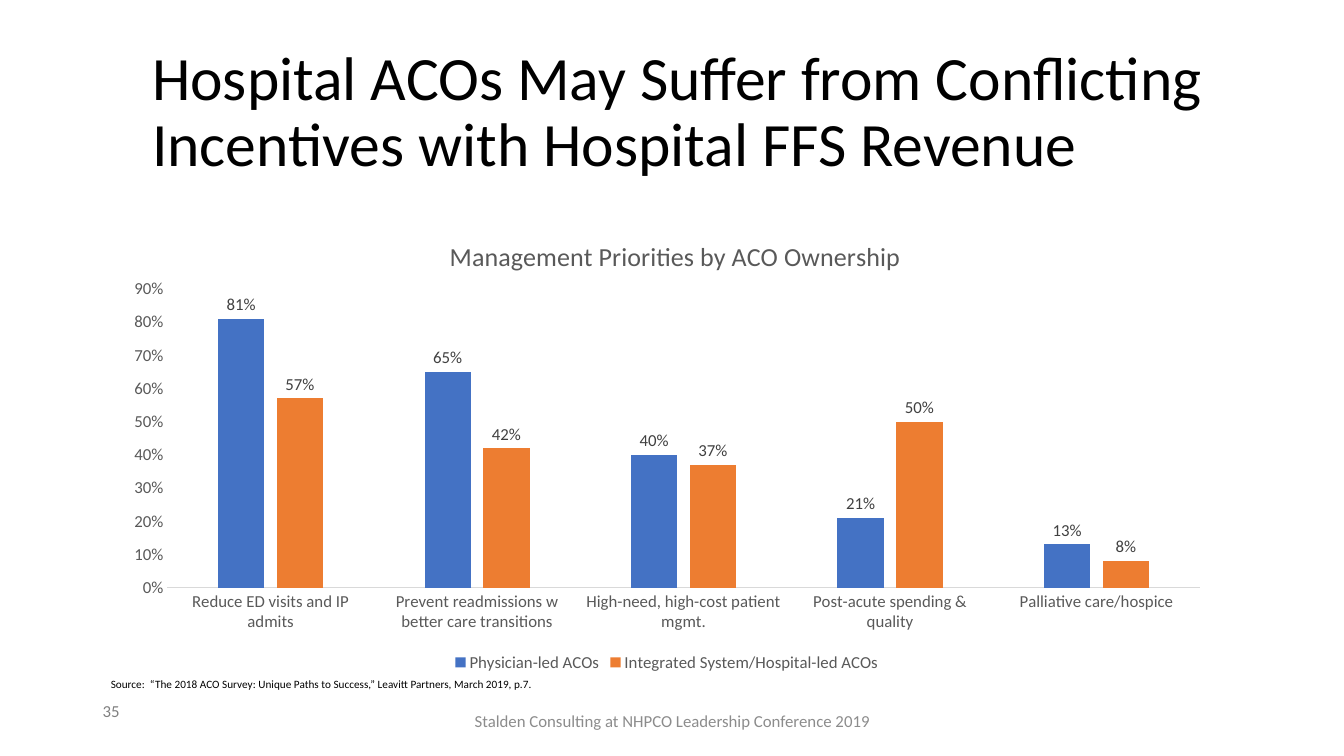
import pptx
import pptx.chart.data
import pptx.dml.color
import pptx.enum.chart
import pptx.enum.text
import pptx.oxml
import pptx.oxml.ns
import pptx.util
from pptx.util import Inches

RGBColor = pptx.dml.color.RGBColor
BLACK = RGBColor(0x00, 0x00, 0x00)
AXIS_TEXT = RGBColor(0x59, 0x59, 0x59)
LABEL_TEXT = RGBColor(0x40, 0x40, 0x40)
AXIS_LINE = RGBColor(0xD9, 0xD9, 0xD9)
FOOTER_TEXT = RGBColor(0x8C, 0x8C, 0x8C)
NUMBER_TEXT = RGBColor(0x80, 0x80, 0x80)
BLUE = RGBColor(0x44, 0x72, 0xC4)
ORANGE = RGBColor(0xED, 0x7D, 0x31)
FONT = "Calibri"
ALIGN = pptx.enum.text.PP_ALIGN
ANCHOR = pptx.enum.text.MSO_ANCHOR

CATEGORIES = [
    "Reduce ED visits and IP admits",
    "Prevent readmissions w better care transitions",
    "High-need, high-cost patient mgmt.",
    "Post-acute spending & quality",
    "Palliative care/hospice",
]
SERIES = [
    ("Physician-led ACOs", (0.81, 0.65, 0.4, 0.21, 0.13), BLUE),
    ("Integrated System/Hospital-led ACOs", (0.57, 0.42, 0.37, 0.5, 0.08), ORANGE),
]


def format_font(font, size, color):
    font.name = FONT
    font.size = pptx.util.Pt(size)
    font.bold = False
    font.color.rgb = color


def add_text(slide, text, box, size=12, color=BLACK, align=ALIGN.LEFT,
             anchor=ANCHOR.TOP, line_spacing=1.0):
    shape = slide.shapes.add_textbox(*map(Inches, box))
    frame = shape.text_frame
    frame.word_wrap = True
    frame.vertical_anchor = anchor
    paragraph = frame.paragraphs[0]
    paragraph.alignment = align
    paragraph.line_spacing = line_spacing
    run = paragraph.add_run()
    run.text = text
    format_font(run.font, size, color)


def set_layout(element, **fractions):
    for layout in element.findall(pptx.oxml.ns.qn("c:layout")):
        element.remove(layout)
    modes = '<c:layoutTarget val="inner"/>' if "w" in fractions else ""
    modes += '<c:xMode val="edge"/><c:yMode val="edge"/>'
    values = "".join(f'<c:{name} val="{value}"/>' for name, value in fractions.items())
    layout = pptx.oxml.parse_xml(
        f'<c:layout {pptx.oxml.ns.nsdecls("c")}>'
        f"<c:manualLayout>{modes}{values}</c:manualLayout></c:layout>"
    )
    text = element.find(pptx.oxml.ns.qn("c:tx"))
    element.insert(0 if text is None else 1, layout)


def format_axes(chart):
    for axis in (chart.category_axis, chart.value_axis):
        axis.has_major_gridlines = False
        axis.major_tick_mark = pptx.enum.chart.XL_TICK_MARK.NONE
        axis.minor_tick_mark = pptx.enum.chart.XL_TICK_MARK.NONE
        format_font(axis.tick_labels.font, 12, AXIS_TEXT)
    category_line = chart.category_axis.format.line
    category_line.color.rgb = AXIS_LINE
    category_line.width = pptx.util.Pt(0.75)
    value_axis = chart.value_axis
    value_axis.format.line.fill.background()
    value_axis.minimum_scale = 0
    value_axis.maximum_scale = 0.9
    value_axis.major_unit = 0.1
    value_axis.tick_labels.number_format = "0%"
    value_axis.tick_labels.number_format_is_linked = False


def format_series(series, color):
    series.format.fill.solid()
    series.format.fill.fore_color.rgb = color
    series.invert_if_negative = False
    labels = series.data_labels
    labels.show_value = True
    labels.number_format = "0%"
    labels.number_format_is_linked = False
    labels.position = pptx.enum.chart.XL_LABEL_POSITION.OUTSIDE_END
    format_font(labels.font, 12, LABEL_TEXT)


def add_priorities_chart(slide, box):
    data = pptx.chart.data.CategoryChartData(number_format="0%")
    data.categories = CATEGORIES
    for name, values, _ in SERIES:
        data.add_series(name, values)
    chart = slide.shapes.add_chart(
        pptx.enum.chart.XL_CHART_TYPE.COLUMN_CLUSTERED, *map(Inches, box), data
    ).chart
    format_font(chart.font, 10, BLACK)

    chart.has_title = True
    title = chart.chart_title
    title.include_in_layout = False
    run = title.text_frame.paragraphs[0].add_run()
    run.text = "Management Priorities by ACO Ownership"
    format_font(run.font, 18.6, AXIS_TEXT)
    set_layout(title._element, x=0.3, y=0.05)

    chart.has_legend = True
    chart.legend.position = pptx.enum.chart.XL_LEGEND_POSITION.BOTTOM
    chart.legend.include_in_layout = False
    format_font(chart.legend.font, 12, AXIS_TEXT)

    format_axes(chart)
    plot = chart.plots[0]
    plot.vary_by_categories = False
    plot.gap_width = 219
    plot.overlap = -27
    for series, (_, _, color) in zip(plot.series, SERIES):
        format_series(series, color)
    plot_area = chart._chartSpace.chart.plotArea
    set_layout(plot_area, x=0.05, y=0.17, w=0.93, h=0.64)


def add_footer(slide, left, top):
    add_text(slide, "Source:  “The 2018 ACO Survey: Unique Paths to Success,” "
             "Leavitt Partners, March 2019, p.7.",
             (left + 0.08, top, 8.72, 0.24), size=8)
    add_text(slide, "35", (left, top + 0.23, 3, 0.4), color=NUMBER_TEXT)
    add_text(slide, "Stalden Consulting at NHPCO Leadership Conference 2019",
             (left + 3.5, top + 0.28, 4.5, 0.4), color=FOOTER_TEXT,
             align=ALIGN.CENTER, anchor=ANCHOR.MIDDLE)


def main():
    presentation = pptx.Presentation()
    presentation.slide_width = Inches(13.33)
    presentation.slide_height = Inches(7.5)
    slide = presentation.slides.add_slide(presentation.slide_layouts[6])
    add_text(slide, "Hospital ACOs May Suffer from Conflicting "
             "Incentives with Hospital FFS Revenue",
             (1.41, 0.4, 11.01, 1.45), size=44, anchor=ANCHOR.MIDDLE, line_spacing=0.9)
    add_priorities_chart(slide, (1.11, 2.08, 11.01, 4.63))
    add_footer(slide, 0.92, 6.67)
    presentation.save("out.pptx")


if __name__ == "__main__":
    main()
